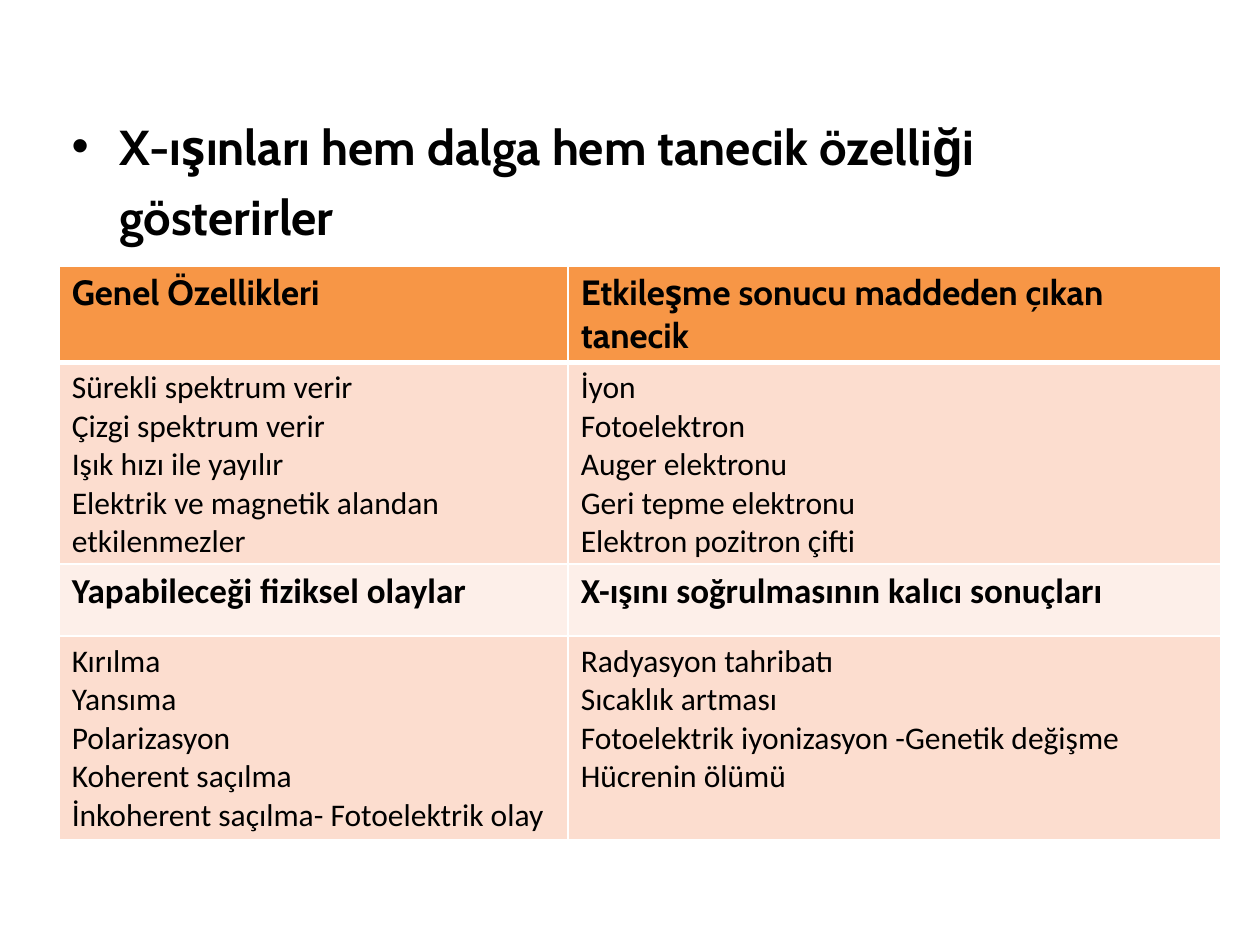
import pptx
import pptx.dml.color
import pptx.oxml
import pptx.oxml.ns
import pptx.util
from lxml import etree

Inches, Pt = pptx.util.Inches, pptx.util.Pt
RGBColor = pptx.dml.color.RGBColor

BLACK = RGBColor(0x00, 0x00, 0x00)
WHITE = RGBColor(0xFF, 0xFF, 0xFF)
ORANGE = RGBColor(0xF7, 0x96, 0x46)
PEACH = RGBColor(0xFC, 0xDD, 0xCF)
PALE_PEACH = RGBColor(0xFD, 0xEF, 0xE9)

HEADLINE = "X-ışınları hem dalga hem tanecik özelliği gösterirler"

# Row styles: fill, font, size, bold, bottom border width
HEADER = (ORANGE, "Cabin", 20, True, 3)
SUBHEADER = (PALE_PEACH, "Calibri", 20, True, 1)
BODY = (PEACH, "Calibri", 18, False, 1)

# Rows: style, height, lines of each cell
ROWS = [
    (HEADER, 0.67, [
        ["Genel Özellikleri"],
        ["Etkileşme sonucu maddeden çıkan tanecik"],
    ]),
    (BODY, 1.36, [
        ["Sürekli spektrum verir", "Çizgi spektrum verir", "Işık hızı ile yayılır",
         "Elektrik ve magnetik alandan etkilenmezler"],
        ["İyon", "Fotoelektron", "Auger elektronu", "Geri tepme elektronu",
         "Elektron pozitron çifti"],
    ]),
    (SUBHEADER, 0.57, [
        ["Yapabileceği fiziksel olaylar"],
        ["X-ışını soğrulmasının kalıcı sonuçları"],
    ]),
    (BODY, 1.62, [
        ["Kırılma", "Yansıma", "Polarizasyon", "Koherent saçılma",
         "İnkoherent saçılma- Fotoelektrik olay"],
        ["Radyasyon tahribatı", "Sıcaklık artması",
         "Fotoelektrik iyonizasyon -Genetik değişme", "Hücrenin ölümü"],
    ]),
]
COLUMN_WIDTHS = [4.04, 5.18]
LEFT, TABLE_TOP = 0.47, 2.11


def style_text(text_frame, font_name, size, bold):
    for paragraph in text_frame.paragraphs:
        for run in paragraph.runs:
            run.font.name = font_name
            run.font.size = Pt(size)
            run.font.bold = bold
            run.font.color.rgb = BLACK


def add_borders(cell, widths):
    """Draw white borders; widths maps a:lnL, a:lnR, a:lnT, a:lnB to points."""
    properties = cell._tc.get_or_add_tcPr()
    for position, (side, width) in enumerate(widths.items()):
        line = etree.Element(pptx.oxml.ns.qn(side), w=str(Pt(width)))
        fill = etree.SubElement(line, pptx.oxml.ns.qn("a:solidFill"))
        etree.SubElement(fill, pptx.oxml.ns.qn("a:srgbClr"), val=str(WHITE))
        properties.insert(position, line)


def add_headline(slide):
    headline = slide.shapes.add_textbox(Inches(LEFT), Inches(0.78), Inches(9), Inches(1.45))
    frame = headline.text_frame
    frame.word_wrap = True
    frame.text = HEADLINE
    style_text(frame, "Cabin", 28, True)
    paragraph = frame.paragraphs[0]
    paragraph.line_spacing = 1.2
    paragraph.space_before = Pt(5.6)
    properties = paragraph._p.get_or_add_pPr()
    properties.set("marL", str(Inches(0.38)))
    properties.set("indent", str(-Inches(0.38)))
    etree.SubElement(properties, pptx.oxml.ns.qn("a:buFont"), typeface="Arial")
    etree.SubElement(properties, pptx.oxml.ns.qn("a:buChar"), char="•")


def add_properties_table(slide):
    table = slide.shapes.add_table(
        len(ROWS), len(COLUMN_WIDTHS), Inches(LEFT), Inches(TABLE_TOP),
        Inches(sum(COLUMN_WIDTHS)), Inches(sum(height for _, height, _ in ROWS))).table
    for column, width in zip(table.columns, COLUMN_WIDTHS):
        column.width = Inches(width)

    top_width = 1
    for row, (style, height, contents) in zip(table.rows, ROWS):
        fill, font_name, size, bold, bottom_width = style
        row.height = Inches(height)
        for cell, lines in zip(row.cells, contents):
            cell.text_frame.text = "\n".join(lines)
            style_text(cell.text_frame, font_name, size, bold)
            cell.fill.solid()
            cell.fill.fore_color.rgb = fill
            add_borders(cell, {"a:lnL": 1, "a:lnR": 1, "a:lnT": top_width, "a:lnB": bottom_width})
        top_width = bottom_width


def main():
    presentation = pptx.Presentation()
    presentation.slide_width, presentation.slide_height = Inches(10), Inches(7.5)
    slide = presentation.slides.add_slide(presentation.slide_layouts[6])
    add_headline(slide)
    add_properties_table(slide)
    presentation.save("out.pptx")


if __name__ == "__main__":
    main()
